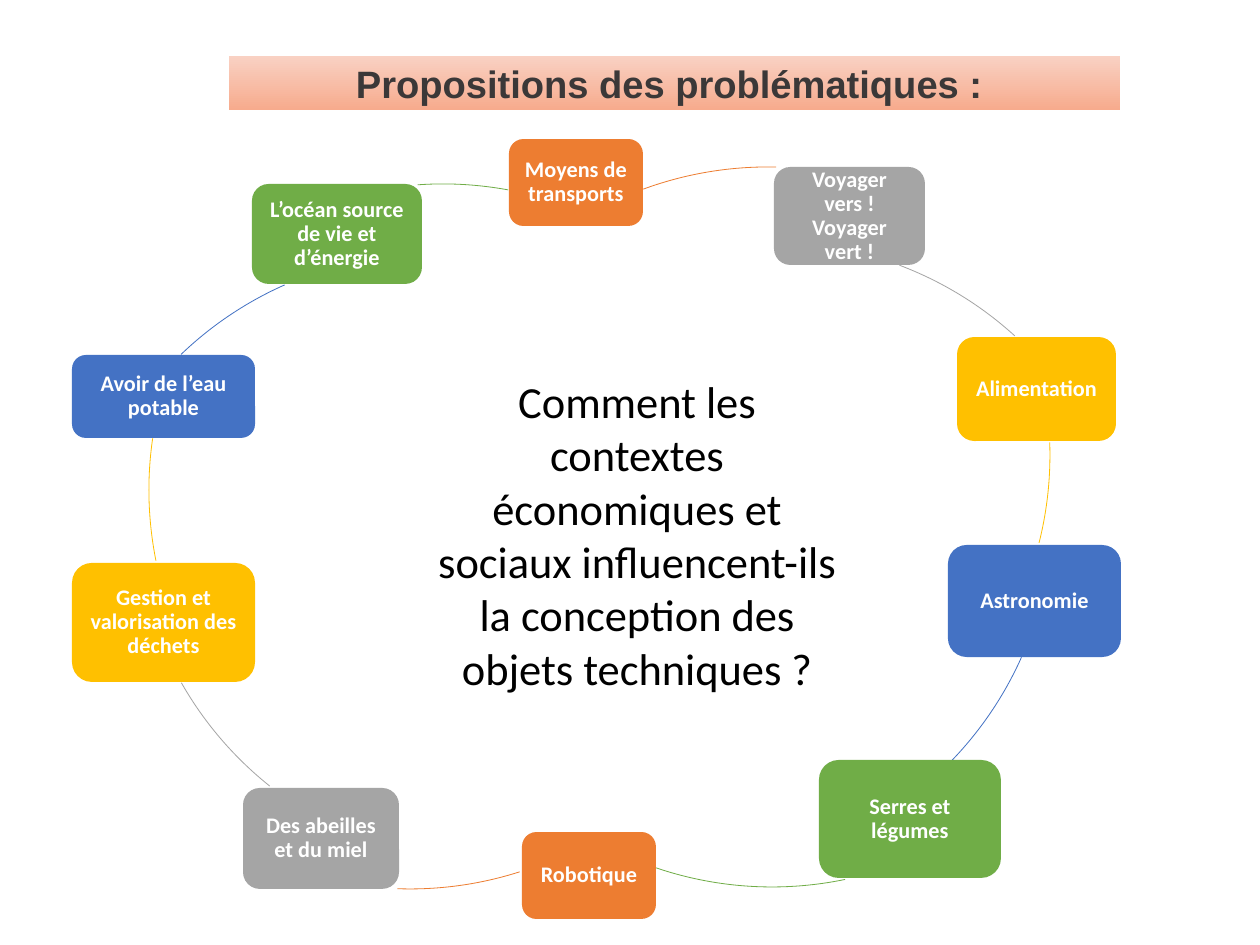
from dataclasses import dataclass
from itertools import cycle

from pptx import Presentation
from pptx.dml.color import RGBColor
from pptx.enum.shapes import MSO_SHAPE
from pptx.enum.text import MSO_ANCHOR, MSO_AUTO_SIZE, PP_ALIGN
from pptx.util import Emu, Pt

PX = 8000
ADJUSTMENT_PER_DEGREE = 0.6
CIRCLE_SIZE = 722


@dataclass(frozen=True)
class Theme:
    """Colours, fonts and type sizes of the slide."""
    banner: tuple = ("F9D1C3", "F7AB8D")
    title: str = "3B3838"
    question: str = "000000"
    topic: str = "FFFFFF"
    cycle: tuple = ("ED7D31", "A5A5A5", "FFC000", "4472C4", "70AD47")
    title_font: str = "Arial"
    body_font: str = "Calibri"
    title_size: int = 24
    question_size: int = 28
    topic_size: int = 14


THEME = Theme()

TOPICS = [
    ("Moyens de transports", (509, 139, 134, 87)),
    ("Voyager vers ! Voyager vert !", (774, 167, 151, 98)),
    ("Alimentation", (957, 337, 159, 104)),
    ("Astronomie", (948, 545, 173, 112)),
    ("Serres et légumes", (819, 760, 182, 118)),
    ("Robotique", (522, 832, 134, 87)),
    ("Des abeilles et du miel", (243, 788, 156, 101)),
    ("Gestion et valorisation des déchets", (72, 563, 183, 119)),
    ("Avoir de l’eau potable", (72, 355, 183, 83)),
    ("L’océan source de vie et d’énergie", (252, 184, 170, 100)),
]

LINKS = [
    (407, 167, 249.8, 271.3),
    (411, 242, 290.7, 312.3),
    (328, 94, 358, 14.1),
    (331, 149, 24.1, 43.9),
    (411, 165, 78.3, 108.7),
    (49, 167, 72.3, 92),
    (134, 143, 128.6, 150.3),
    (149, 129, 168.7, 188.2),
    (70, 254, 226.2, 246.1),
    (82, 184, 266, 280.4),
]


def px(*lengths):
    """Turn pixel lengths into EMU."""
    return [Emu(length * PX) for length in lengths]


def write(frame, text, font_name, size, color, bold=False):
    """Write one centred paragraph in a text frame."""
    frame.auto_size = MSO_AUTO_SIZE.NONE
    frame.vertical_anchor = MSO_ANCHOR.MIDDLE
    frame.text = text
    paragraph = frame.paragraphs[0]
    paragraph.alignment = PP_ALIGN.CENTER
    font = paragraph.font
    font.name, font.size, font.bold = font_name, Pt(size), bold
    font.color.rgb = RGBColor.from_string(color)
    return paragraph


def place_title(slide, box):
    """Set the title on its gradient banner."""
    title = slide.shapes.title
    title.left, title.top, title.width, title.height = px(*box)
    title.fill.gradient()
    title.fill.gradient_angle = 270
    for stop, color in zip(title.fill.gradient_stops, THEME.banner):
        stop.color.rgb = RGBColor.from_string(color)
    write(title.text_frame, "Propositions des problématiques : ",
          THEME.title_font, THEME.title_size, THEME.title, bold=True)
    title.text_frame.word_wrap = False


def add_topic(slide, box, text, color):
    """Add one rounded topic of the cycle."""
    topic = slide.shapes.add_shape(MSO_SHAPE.ROUNDED_RECTANGLE, *px(*box))
    topic.shadow.inherit = False
    topic.fill.solid()
    topic.fill.fore_color.rgb = RGBColor.from_string(color)
    topic.line.fill.background()
    frame = topic.text_frame
    frame.word_wrap = True
    frame.margin_left, frame.margin_top, frame.margin_right, frame.margin_bottom = px(8, 7, 8, 7)
    paragraph = write(frame, text, THEME.body_font, THEME.topic_size, THEME.topic, bold=True)
    paragraph.line_spacing = 0.9


def add_link(slide, box, start, end, color):
    """Add the arc between two topics, on the circle that fills the box."""
    link = slide.shapes.add_shape(MSO_SHAPE.ARC, *px(*box))
    link.shadow.inherit = False
    link.fill.background()
    link.line.color.rgb = RGBColor.from_string(color)
    link.line.width = Pt(0.5)
    link.adjustments[0] = start * ADJUSTMENT_PER_DEGREE
    link.adjustments[1] = end * ADJUSTMENT_PER_DEGREE


def add_question(slide, box):
    """Add the central question."""
    question = slide.shapes.add_textbox(*px(*box))
    question.text_frame.word_wrap = True
    write(question.text_frame,
          "Comment les contextes économiques et sociaux influencent-ils "
          "la conception des objets techniques ?",
          THEME.body_font, THEME.question_size, THEME.question)


def main():
    """Build the slide and save it."""
    deck = Presentation()
    deck.slide_width, deck.slide_height = px(1260, 945)
    slide = deck.slides.add_slide(deck.slide_layouts[5])
    place_title(slide, (229, 56, 891, 54))
    for (text, box), (left, top, start, end), color in zip(TOPICS, LINKS, cycle(THEME.cycle)):
        add_topic(slide, box, text, color)
        add_link(slide, (left, top, CIRCLE_SIZE, CIRCLE_SIZE), start, end, color)
    add_question(slide, (421, 365, 432, 338))
    deck.save("out.pptx")


if __name__ == "__main__":
    main()
